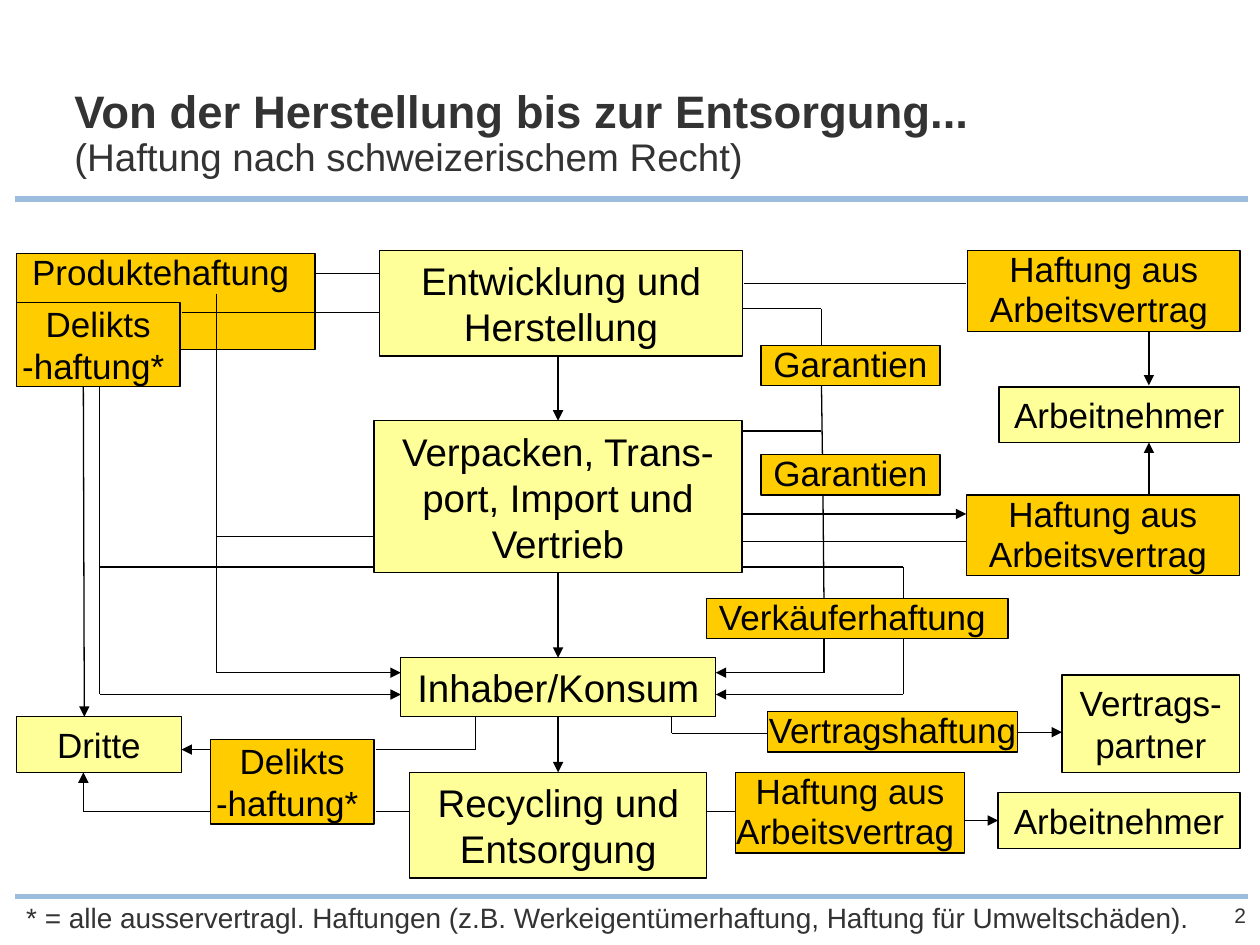
"""Build the slide on liability from manufacture to disposal under Swiss law."""
from itertools import pairwise

from lxml import etree
from pptx import Presentation
from pptx import util as u
from pptx.dml.color import RGBColor
from pptx.enum import shapes, text
from pptx.oxml import ns

YELLOW = RGBColor(0xFF, 0xFF, 0x99)
AMBER = RGBColor(0xFF, 0xCC, 0x00)
BLACK = RGBColor(0x00, 0x00, 0x00)
GREY = RGBColor(0x33, 0x33, 0x33)
BLUE = RGBColor(0x9C, 0xBD, 0xDE)
LEFT, CENTER, RIGHT = text.PP_ALIGN.LEFT, text.PP_ALIGN.CENTER, text.PP_ALIGN.RIGHT

HEADING = "Von der Herstellung bis zur Entsorgung..."
SUBHEADING = "(Haftung nach schweizerischem Recht)"
FOOTNOTE = ("* = alle ausservertragl. Haftungen (z.B. Werkeigentümerhaftung, "
            "Haftung für Umweltschäden).")
PRODUCT_LIABILITY = ("Produktehaftung ", (0.33, 5.11, 6.02, 1.93))
DELICT = "Delikts\n-haftung* "
EMPLOYMENT = "Haftung aus Arbeitsvertrag "

STAGES = [
    ("Entwicklung und Herstellung", (7.65, 5.05, 7.32, 2.13)),
    ("Verpacken, Trans-port, Import und Vertrieb", (7.54, 8.48, 7.42, 3.07)),
    ("Inhaber/Konsum", (8.08, 13.26, 6.35, 1.19)),
    ("Recycling und Entsorgung", (8.26, 15.57, 5.99, 2.13)),
]
PARTIES = [
    ("Dritte", (0.33, 14.45, 3.33, 1.12)),
    ("Vertrags-partner", (21.41, 13.61, 3.58, 1.96)),
    ("Arbeitnehmer", (20.14, 7.8, 4.85, 1.12)),
    ("Arbeitnehmer", (20.12, 15.98, 4.88, 1.12)),
]
DELICTS = [
    (DELICT, (0.33, 6.1, 3.3, 1.7)),
    (DELICT, (4.24, 14.91, 3.3, 1.7)),
]
LIABILITIES = [
    (EMPLOYMENT, (19.51, 5.05, 5.49, 1.63)),
    (EMPLOYMENT, (19.48, 9.98, 5.51, 1.63)),
    (EMPLOYMENT, (14.83, 15.57, 4.62, 1.63)),
    ("Garantien", (15.34, 6.96, 3.61, 0.81)),
    ("Garantien", (15.34, 9.17, 3.61, 0.81)),
    ("Verkäuferhaftung ", (14.25, 12.07, 6.07, 0.81)),
    ("Vertragshaftung", (15.47, 14.35, 5.05, 0.81)),
]
ARROWS = [
    [(11.25, 7.19), (11.25, 8.48)],
    [(11.25, 11.56), (11.25, 13.26)],
    [(11.25, 14.45), (11.25, 15.57)],
    [(4.37, 5.92), (4.37, 13.56), (8.08, 13.56)],
    [(2.01, 7.8), (2.01, 14), (8.08, 14)],
    [(1.68, 7.8), (1.7, 14.45)],
    [(4.24, 16.36), (1.68, 16.36), (1.68, 15.57)],
    [(4.24, 15.11), (3.66, 15.11)],
    [(14.96, 10.36), (19.48, 10.36)],
    [(18.21, 12.88), (18.21, 14), (14.43, 14)],
    [(16.61, 12.88), (16.61, 13.56), (14.43, 13.56)],
    [(19.46, 16.54), (20.12, 16.54)],
    [(20.5, 14.76), (21.41, 14.76)],
    [(23.16, 6.68), (23.16, 7.77)],
    [(23.16, 9.98), (23.16, 8.92)],
]
LINKS = [
    [(6.35, 5.51), (7.65, 5.51)],
    [(3.66, 6.3), (7.65, 6.3)],
    [(4.37, 10.82), (7.54, 10.82)],
    [(2.01, 11.43), (7.54, 11.43)],
    [(14.99, 5.72), (19.48, 5.72)],
    [(14.96, 6.22), (16.56, 6.22), (16.56, 6.96)],
    [(14.96, 8.69), (16.56, 8.69)],
    [(16.56, 7.77), (16.58, 9.17)],
    [(16.59, 9.98), (16.61, 12.07)],
    [(14.96, 10.92), (19.48, 10.92)],
    [(14.96, 11.43), (18.21, 11.43), (18.21, 12.07)],
    [(8.26, 16.36), (7.57, 16.36)],
    [(9.58, 14.45), (9.58, 15.11), (7.57, 15.11)],
    [(13.54, 14.45), (13.54, 14.78), (15.47, 14.78)],
    [(14.25, 16.36), (14.83, 16.36)],
]
RULES = [[(0.3, y), (25.15, y)] for y in (4.01, 18.08)]


def place(box, area):
    box.left, box.top, box.width, box.height = map(u.Cm, area)


def set_frame(box, anchor, inset=True):
    frame = box.text_frame
    frame.word_wrap = True
    frame.auto_size = text.MSO_AUTO_SIZE.NONE
    frame.vertical_anchor = anchor
    if not inset:
        frame.margin_left = frame.margin_right = u.Cm(0)
        frame.margin_top = frame.margin_bottom = u.Cm(0)
    return frame.paragraphs[0]


def format_para(para, size, color, align, spacing):
    para.alignment = align
    para.line_spacing = spacing
    para.space_before = u.Pt(0)
    para.font.name = "Arial"
    para.font.size = u.Pt(size)
    para.font.color.rgb = color


def paint(box, fill):
    box.fill.solid()
    box.fill.fore_color.rgb = fill
    box.line.color.rgb = BLACK
    box.line.width = u.Pt(0.75)


def add_boxes(page, entries, fill, size, spacing=1.0, inset=False):
    for label, area in entries:
        box = page.shapes.add_shape(shapes.MSO_SHAPE.RECTANGLE, *map(u.Cm, area))
        box.shadow.inherit = False
        paint(box, fill)
        para = set_frame(box, text.MSO_ANCHOR.MIDDLE, inset)
        para.text = label
        format_para(para, size, BLACK, CENTER, spacing)


def add_lines(page, routes, color=BLACK, width=0.75, arrow=False):
    for route in routes:
        for start, end in pairwise(route):
            line = page.shapes.add_connector(
                shapes.MSO_CONNECTOR.STRAIGHT, *map(u.Cm, start + end))
            line.line.color.rgb = color
            line.line.width = u.Pt(width)
            etree.SubElement(line._element.spPr, ns.qn("a:effectLst"))
            if arrow and end == route[-1]:
                etree.SubElement(line.line._get_or_add_ln(), ns.qn("a:tailEnd"),
                                 type="triangle")


def add_note(page, label, area, size, align, spacing):
    box = page.shapes.add_textbox(*map(u.Cm, area))
    para = set_frame(box, text.MSO_ANCHOR.TOP, inset=False)
    para.text = label
    format_para(para, size, GREY, align, spacing)


def fill_title(title):
    place(title, (1.5, 1.8, 18.39, 2.26))
    para = set_frame(title, text.MSO_ANCHOR.TOP, inset=False)
    span = para.add_run()
    span.text = HEADING
    span.font.size = u.Pt(26)
    span.font.bold = True
    para.add_line_break()
    para.add_run().text = SUBHEADING
    format_para(para, 22, GREY, LEFT, 0.9)


def fill_body(body):
    label, area = PRODUCT_LIABILITY
    place(body, area)
    paint(body, AMBER)
    para = set_frame(body, text.MSO_ANCHOR.TOP, inset=False)
    para.text = label
    props = para._p.get_or_add_pPr()
    props.set("marL", "0")
    props.set("indent", "0")
    etree.SubElement(props, ns.qn("a:buNone"))
    format_para(para, 20, BLACK, CENTER, 0.95)


def main():
    deck = Presentation()
    deck.slide_width, deck.slide_height = u.Cm(25.4), u.Cm(19.05)
    page = deck.slides.add_slide(deck.slide_layouts[1])
    fill_title(page.shapes.title)
    fill_body(page.placeholders[1])
    add_lines(page, RULES, BLUE, 3)
    add_boxes(page, STAGES, YELLOW, 22, inset=True)
    add_boxes(page, PARTIES, YELLOW, 20, inset=True)
    add_boxes(page, DELICTS, AMBER, 20)
    add_boxes(page, LIABILITIES, AMBER, 20, spacing=0.95)
    add_lines(page, LINKS)
    add_lines(page, ARROWS, arrow=True)
    add_note(page, FOOTNOTE, (0.53, 18.21, 23.8, 0.64), 16, LEFT, 0.95)
    add_note(page, "2", (24.13, 18.19, 0.99, 0.51), 12, RIGHT, 1.0)
    deck.save("out.pptx")


if __name__ == "__main__":
    main()
